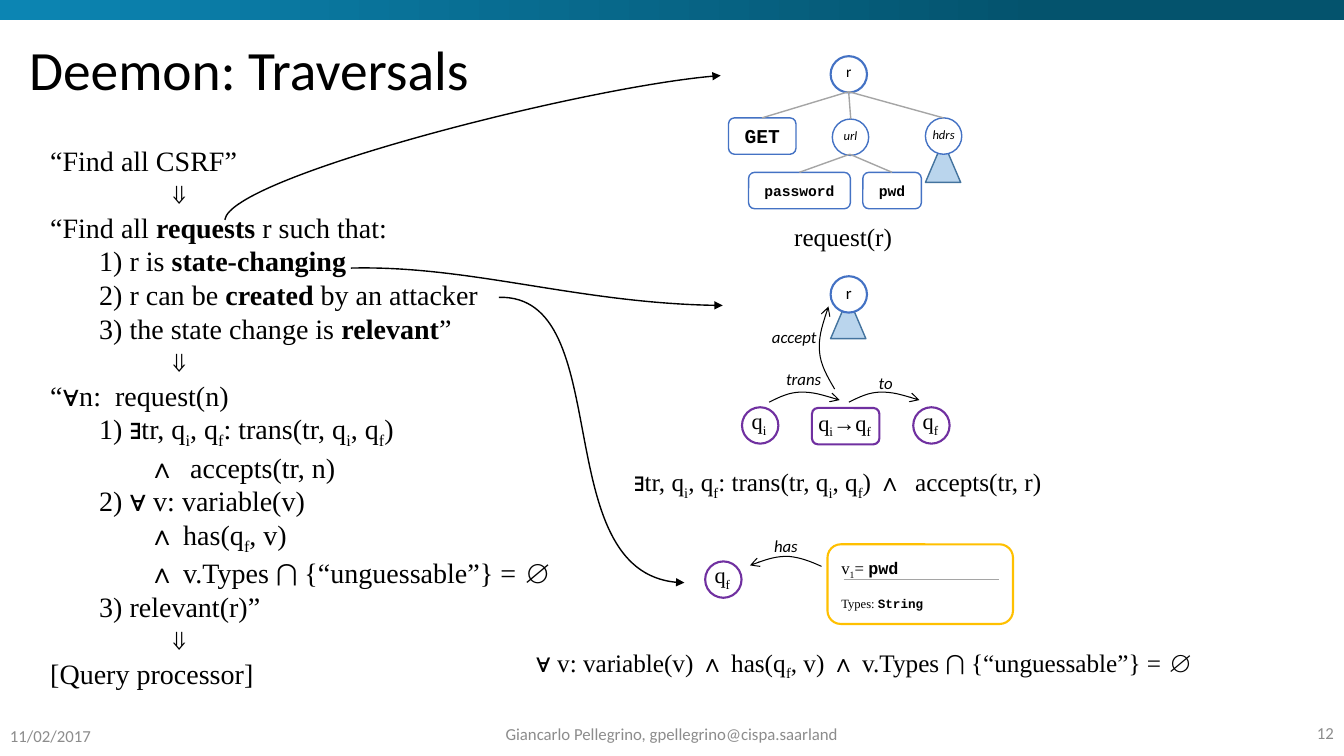
import pptx
import pptx.dml.color
import pptx.enum.shapes
import pptx.enum.text
import pptx.oxml
import pptx.oxml.ns
import pptx.util
from pptx.util import Pt

RGBColor = pptx.dml.color.RGBColor
MSO_SHAPE = pptx.enum.shapes.MSO_SHAPE
ALIGN = pptx.enum.text.PP_ALIGN
ANCHOR = pptx.enum.text.MSO_ANCHOR
OxmlElement = pptx.oxml.xmlchemy.OxmlElement
qn = pptx.oxml.ns.qn

BLACK = RGBColor(0x00, 0x00, 0x00)
WHITE = RGBColor(0xFF, 0xFF, 0xFF)
GRAY = RGBColor(0x8C, 0x8C, 0x8C)
EDGE = RGBColor(0xA5, 0xA5, 0xA5)
BLUE = RGBColor(0x44, 0x72, 0xC4)
PURPLE = RGBColor(0x70, 0x30, 0xA0)
GOLD = RGBColor(0xFF, 0xC0, 0x00)
SUBTREE = RGBColor(0x5B, 0x9B, 0xD5)
SUBTREE_EDGE = RGBColor(0x43, 0x73, 0x9E)
BAR_LIGHT = RGBColor(0x0C, 0x85, 0xB3)
BAR_DARK = RGBColor(0x04, 0x53, 0x6D)

SANS = {"name": "Calibri"}
SERIF = {"name": "Times New Roman"}
CODE = {"name": "Courier New", "bold": True}
ITALIC = {"name": "Calibri", "italic": True}
MARKS = {"_": {}, "*": {"bold": True}, "#": CODE}


def write(paragraph, text, size, face, ink=BLACK):
    for part in text.split("|"):
        mark = part[:1] if part[:1] in MARKS else ""
        run = paragraph.add_run()
        run.text = part[len(mark):]
        run.font.color.rgb = ink
        for name, value in {"size": Pt(size), **face, **MARKS.get(mark, {})}.items():
            setattr(run.font, name, value)
        if mark == "_":
            run.font._element.set("baseline", "-25000")


def outline(shape, color, width, fill=None):
    shape.shadow.inherit = False
    shape.line.color.rgb = color
    shape.line.width = Pt(width)
    if fill is None:
        shape.fill.background()
    else:
        shape.fill.solid()
        shape.fill.fore_color.rgb = fill


deck = pptx.Presentation()
deck.slide_width, deck.slide_height = Pt(960), Pt(540)
slide = deck.slides.add_slide(deck.slide_layouts[6])
shapes = slide.shapes

bar = shapes.add_shape(MSO_SHAPE.RECTANGLE, 0, 0, Pt(960), Pt(14.4))
bar.shadow.inherit = False
bar.line.fill.background()
bar.fill.gradient()
bar.fill.gradient_angle = 0
for stop, color, position in zip(bar.fill.gradient_stops, (BAR_LIGHT, BAR_DARK), (0, 0.78)):
    stop.color.rgb = color
    stop.position = position

captions = [
    ("Deemon: Traversals", 13.7, 24.5, 866.9, 54.7, 39.6, SANS, BLACK, ALIGN.LEFT, ANCHOR.MIDDLE, True),
    ("11/02/2017", 0, 511.2, 216, 28.8, 12, SANS, GRAY, ALIGN.LEFT, ANCHOR.MIDDLE, True),
    ("Giancarlo Pellegrino, gpellegrino@cispa.saarland", 225.4, 509, 509, 31, 12, SANS, GRAY,
     ALIGN.CENTER, ANCHOR.MIDDLE, True),
    ("12", 743.8, 509, 216, 28.8, 12, SANS, GRAY, ALIGN.RIGHT, ANCHOR.MIDDLE, True),
    ("request(r)", 560.2, 154.8, 96.5, 28.8, 18, SERIF, BLACK, ALIGN.LEFT, ANCHOR.TOP, False),
    ("∃tr, q|_i|, q|_f|: trans(tr, q|_i|, q|_f|) ∧  accepts(tr, r)", 445.7, 329.8, 325.4, 28.8,
     18, SERIF, BLACK, ALIGN.LEFT, ANCHOR.TOP, True),
    ("∀ v: variable(v) ∧ has(q|_f|, v) ∧ v.Types ⋂ {“unguessable”} = ∅", 375.8, 458.6, 504, 28.8,
     18, SERIF, BLACK, ALIGN.LEFT, ANCHOR.TOP, True),
]
for text, x, y, w, h in [("trans", 554.4, 259.9, 39.6, 21.6), ("to", 620.6, 262.8, 24.5, 21.6),
                         ("accept", 544.3, 229.7, 46.8, 21.6), ("has", 545.8, 379.4, 31.7, 21.6)]:
    captions.append((text, x, y, w, h, 12, ITALIC, BLACK, ALIGN.LEFT, ANCHOR.TOP, False))

for text, x, y, w, h, size, face, ink, align, anchor, wrap in captions:
    frame = shapes.add_textbox(Pt(x), Pt(y), Pt(w), Pt(h)).text_frame
    frame.word_wrap = wrap
    frame.vertical_anchor = anchor
    frame.paragraphs[0].alignment = align
    if size > 20:
        frame.paragraphs[0].line_spacing = 0.9
    write(frame.paragraphs[0], text, size, face, ink)

ITEM, CLAUSE, ARROW = 35, 70, 85
derivation = [
    (0, "“Find all CSRF”"),
    (ARROW, "⇓"),
    (0, "“Find all |*requests |r such that:"),
    (ITEM, "1) r is |*state-changing"),
    (ITEM, "2) r can be |*created| by an attacker"),
    (ITEM, "3) the state change is |*relevant|”"),
    (ARROW, "⇓"),
    (0, "“∀n:  request(n)"),
    (ITEM, "1) ∃tr, q|_i|, q|_f|: trans(tr, q|_i|, q|_f|)"),
    (CLAUSE, "∧  accepts(tr, n)"),
    (ITEM, "2) ∀ v: variable(v)"),
    (CLAUSE, "∧ has(q|_f|, v)"),
    (CLAUSE, "∧ v.Types ⋂ {“unguessable”} = ∅"),
    (ITEM, "3) relevant(r)”"),
    (ARROW, "⇓"),
    (0, "[Query processor]"),
]
steps = shapes.add_textbox(Pt(28.8), Pt(98.6), Pt(393.1), Pt(395.3)).text_frame
steps.word_wrap = True
for number, (indent, text) in enumerate(derivation):
    step = steps.paragraphs[0] if number == 0 else steps.add_paragraph()
    step._p.get_or_add_pPr().set("marL", str(Pt(indent)))
    write(step, text, 20, SERIF)

for x, y in [(661, 100.8), (593.3, 212.4)]:
    subtree = shapes.add_shape(MSO_SHAPE.ISOSCELES_TRIANGLE, Pt(x), Pt(y), Pt(25.2), Pt(29.5))
    outline(subtree, SUBTREE_EDGE, 1, SUBTREE)
    alpha = OxmlElement("a:alpha")
    alpha.set("val", "42000")
    subtree._element.spPr.find(qn("a:solidFill"))[0].append(alpha)

NODE = 26
CIRCLE, BOX = MSO_SHAPE.OVAL, MSO_SHAPE.ROUNDED_RECTANGLE
nodes = [
    (CIRCLE, 593.3, 40.1, NODE, BLUE, 1.5, "r", 11, SANS, 4),
    (BOX, 520.4, 84.2, 48.2, BLUE, 1, "GET", 14, CODE, 0),
    (CIRCLE, 594.5, 85, NODE, BLUE, 1, "url", 9, ITALIC, 2),
    (CIRCLE, 661, 84.2, NODE, BLUE, 1, "hdrs", 9, ITALIC, 2),
    (BOX, 534.7, 123.1, 72.7, BLUE, 1, "password", 10.5, CODE, 0),
    (BOX, 616.3, 123.1, 41.8, BLUE, 1, "pwd", 10.5, CODE, 0),
    (CIRCLE, 593.3, 197.3, NODE, BLUE, 1.5, "r", 12, SANS, 2),
    (CIRCLE, 530, 290.9, NODE, PURPLE, 1.5, "q|_i", 16, SERIF, 4),
    (BOX, 580, 291.4, 48.2, PURPLE, 1.5, "q|_i|→q|_f", 16, SERIF, 3),
    (CIRCLE, 652.3, 290.9, NODE, PURPLE, 1.5, "q|_f", 16, SERIF, 4),
    (CIRCLE, 503.7, 401, NODE, PURPLE, 1.5, "q|_f", 16, SERIF, 4),
]
for kind, x, y, w, color, width, text, size, face, lift in nodes:
    node = shapes.add_shape(kind, Pt(x), Pt(y), Pt(w), Pt(NODE))
    outline(node, color, width, WHITE)
    frame = node.text_frame
    for name, value in {"margin_left": 0, "margin_right": Pt(1.5 if face is SERIF else 0),
                        "margin_top": 0, "margin_bottom": Pt(lift),
                        "word_wrap": False, "vertical_anchor": ANCHOR.MIDDLE}.items():
        setattr(frame, name, value)
    frame.paragraphs[0].alignment = ALIGN.CENTER
    write(frame.paragraphs[0], text, size, face)

variable = shapes.add_shape(BOX, Pt(591.1), Pt(388.8), Pt(132.5), Pt(56.9))
outline(variable, GOLD, 1.5, WHITE)
variable.text_frame.vertical_anchor = ANCHOR.MIDDLE
value_line = variable.text_frame.paragraphs[0]
types_line = variable.text_frame.add_paragraph()
types_line.space_before = Pt(11)
for line, text, size in [(value_line, "v|_1|= |#pwd", 12), (types_line, "Types: |#String", 9)]:
    line.alignment = ALIGN.LEFT
    write(line, text, size, SERIF)

ROOT, URL = (606.2, 65.5), (607, 110.2)
edges = [(ROOT, (544.3, 84.2), 1), (ROOT, (607.7, 85), 1), (ROOT, (673.9, 84.2), 1),
         (URL, (571, 123.1), 1), (URL, (637.2, 123.1), 1), ((602.6, 414), (713.5, 414), 0.5)]
for start, end, width in edges:
    edge = shapes.add_connector(pptx.enum.shapes.MSO_CONNECTOR.STRAIGHT, *map(Pt, start + end))
    edge.line.color.rgb = EDGE
    edge.line.width = Pt(width)
    edge._element.spPr.append(OxmlElement("a:effectLst"))

trans = [(549.4, 287.3), (556.6, 283.7), (563.8, 280.1), (572.4, 280.1),
         (581, 280.1), (590.4, 283), (599.8, 285.8)]
to = [(x + 57, y) for x, y in trans]
accept = [(596.2, 277.9), (591.1, 269.3), (586.1, 260.6), (585.4, 251.3),
          (584.6, 241.2), (588.2, 229.7), (591.8, 218.9)]
has = [(586.8, 404.6), (578.9, 401), (571.7, 398.2), (563, 397.4),
       (554.4, 397.4), (545, 400.3), (535.7, 403.9)]
to_request = [(160.6, 157), (164.2, 126.7), (422.6, 60.5), (514.8, 54)]
to_transition = [(250.6, 191.5), (335.5, 189.4), (414.7, 217.4), (516.2, 218.2)]
to_variable = [(356.4, 212.4), (441.4, 210.2), (388.1, 415.4), (488.9, 416.2)]
curves = [(curve, "arrow", 0.75) for curve in (trans, to, accept, has)]
curves += [(curve, "triangle", 1) for curve in (to_request, to_transition, to_variable)]

for curve, head, width in curves:
    controls = [(Pt(x), Pt(y)) for x, y in curve]
    builder = shapes.build_freeform(*controls[0])
    builder.add_line_segments(controls[1:], close=False)
    arc = builder.convert_to_shape()
    outline(arc, BLACK, width)
    legs = list(arc._element.iter(qn("a:lnTo")))
    for first in range(0, len(legs), 3):
        bend = OxmlElement("a:cubicBezTo")
        legs[first].addprevious(bend)
        for leg in legs[first:first + 3]:
            bend.append(leg[0])
            leg.getparent().remove(leg)
    tip = OxmlElement("a:tailEnd")
    tip.set("type", head)
    arc.line._get_or_add_ln().append(tip)

deck.save("out.pptx")
